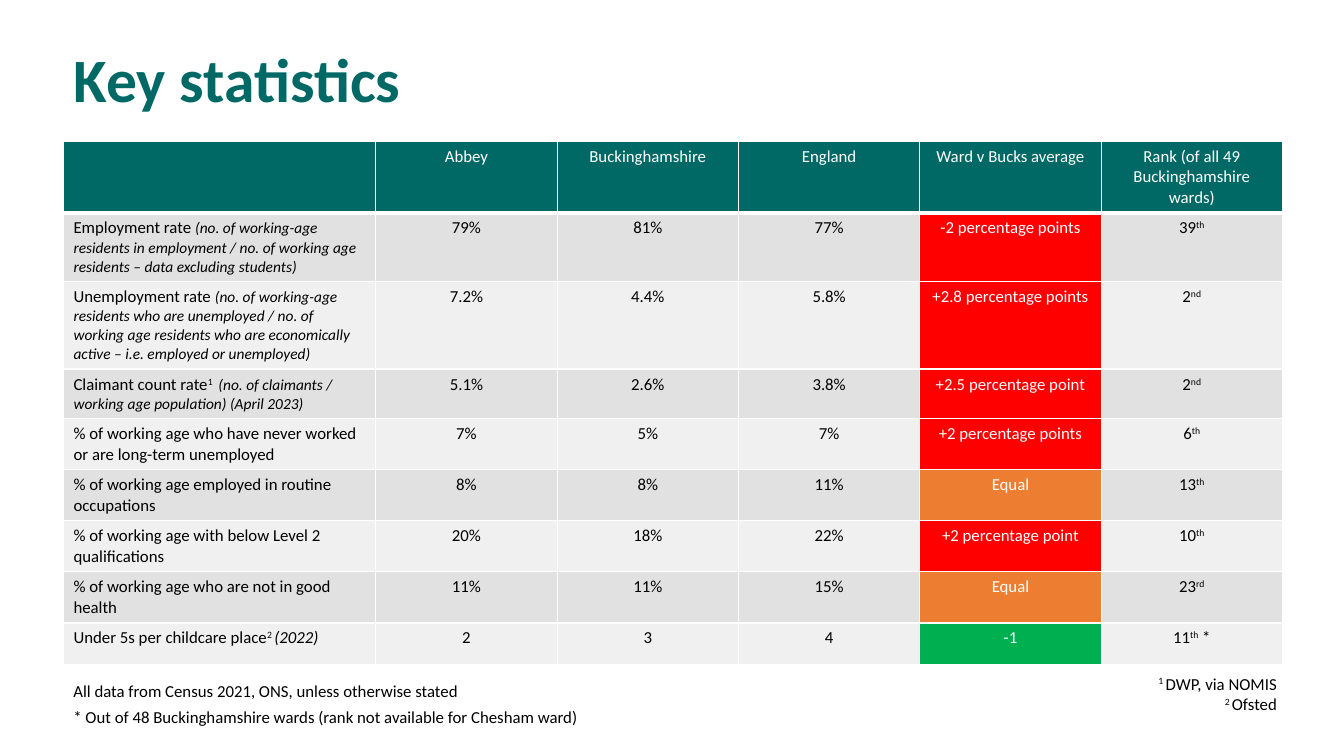
from lxml.etree import SubElement
from pptx import Presentation
from pptx.dml.color import RGBColor
from pptx.enum.text import MSO_ANCHOR, PP_ALIGN
from pptx.oxml.ns import qn
from pptx.util import Cm, Pt

COLORS = {
    "teal": "006965", "white": "FFFFFF", "black": "000000",
    "dark band": "E1E1E1", "light band": "F0F0F0",
    "worse": "FF0000", "equal": "ED7D31", "better": "00B050",
}
TITLE = "Key statistics"
HEADINGS = ["", "Abbey", "Buckinghamshire", "England", "Ward v Bucks average",
            "Rank (of all 49 Buckinghamshire wards)"]
STATISTICS = [
    ([("Employment rate ", ""),
      ("(no. of working-age residents in employment / no. of working age residents – data excluding students)", "note")],
     "79%", "81%", "77%", "-2 percentage points", "worse", [("39", ""), ("th", "super")]),
    ([("Unemployment rate ", ""),
      ("(no. of working-age residents who are unemployed / no. of working age residents "
       "who are economically active – i.e. employed or unemployed)", "note")],
     "7.2%", "4.4%", "5.8%", "+2.8 percentage points", "worse", [("2", ""), ("nd", "super")]),
    ([("Claimant count rate", ""), ("1 ", "super"),
      (" (no. of claimants / working age population) (April 2023)", "note")],
     "5.1%", "2.6%", "3.8%", "+2.5 percentage point", "worse", [("2", ""), ("nd", "super")]),
    ("% of working age who have never worked or are long-term unemployed",
     "7%", "5%", "7%", "+2 percentage points", "worse", [("6", ""), ("th", "super")]),
    ("% of working age employed in routine occupations",
     "8%", "8%", "11%", "Equal", "equal", [("13", ""), ("th", "super")]),
    ("% of working age with below Level 2 qualifications",
     "20%", "18%", "22%", "+2 percentage point", "worse", [("10", ""), ("th", "super")]),
    ("% of working age who are not in good health",
     "11%", "11%", "15%", "Equal", "equal", [("23", ""), ("rd", "super")]),
    ([("Under 5s per childcare place", ""), ("2 ", "super"), ("(2022)", "italic")],
     "2", "3", "4", "-1", "better", [("11", ""), ("th", "super"), (" *", "")]),
]
FOOTNOTES = [
    (1.6, 17.02, 18.31, 0.76, PP_ALIGN.LEFT,
     ["All data from Census 2021, ONS, unless otherwise stated"]),
    (19.91, 16.84, 12.52, 1.27, PP_ALIGN.RIGHT,
     [[("1 ", "super"), ("DWP, via NOMIS", "")], [("2 ", "super"), ("Ofsted", "")]]),
    (1.6, 17.68, 18.31, 0.76, PP_ALIGN.LEFT,
     ["* Out of 48 Buckinghamshire wards (rank not available for Chesham ward)"]),
]
LEFT, TABLE_TOP, ROW_HEIGHT = 1.6, 3.56, 1.04
COLUMN_WIDTHS = [7.87] + [4.57] * 5


def write(paragraph, content, size=12, color="black", bold=False, align=PP_ALIGN.LEFT):
    paragraph.alignment = align
    for text, style in [(content, "")] if isinstance(content, str) else content:
        run = paragraph.add_run()
        run.text = text
        font = run.font
        font.name = "Calibri"
        font.size = Pt(11 if style == "note" else size)
        font.bold = bold
        font.italic = style in ("note", "italic")
        font.color.rgb = RGBColor.from_string(COLORS[color])
        if style == "super":
            font._element.set("baseline", "30000")


def fill_cell(cell, content, fill, bottom=1, **text_format):
    properties = cell._tc.get_or_add_tcPr()
    for side, width in (("L", 1), ("R", 1), ("T", 1), ("B", bottom)):
        border = SubElement(properties, qn(f"a:ln{side}"), w=str(Pt(width)))
        SubElement(SubElement(border, qn("a:solidFill")), qn("a:srgbClr"), val=COLORS["white"])
    cell.fill.solid()
    cell.fill.fore_color.rgb = RGBColor.from_string(COLORS[fill])
    if content:
        write(cell.text_frame.paragraphs[0], content, **text_format)


def add_statistics(slide):
    table = slide.shapes.add_table(
        len(STATISTICS) + 1, len(HEADINGS), Cm(LEFT), Cm(TABLE_TOP),
        Cm(sum(COLUMN_WIDTHS)), Cm(ROW_HEIGHT * (len(STATISTICS) + 1))).table
    for column, width in zip(table.columns, COLUMN_WIDTHS):
        column.width = Cm(width)
    for row in table.rows:
        row.height = Cm(ROW_HEIGHT)
    for column, heading in enumerate(HEADINGS):
        fill_cell(table.cell(0, column), heading, "teal", bottom=3,
                  color="white", align=PP_ALIGN.CENTER)
    for row, (label, ward, county, country, gap, verdict, rank) in enumerate(STATISTICS, 1):
        band = "dark band" if row % 2 else "light band"
        fill_cell(table.cell(row, 0), label, band)
        for column, value in enumerate((ward, county, country, gap, rank), 1):
            is_gap = column == 4
            fill_cell(table.cell(row, column), value, verdict if is_gap else band,
                      color="white" if is_gap else "black", align=PP_ALIGN.CENTER)


def main():
    deck = Presentation()
    deck.slide_width, deck.slide_height = Cm(33.87), Cm(19.05)
    slide = deck.slides.add_slide(deck.slide_layouts[5])
    title = slide.shapes.title
    title.left, title.top, title.width, title.height = Cm(LEFT), Cm(0.91), Cm(29.21), Cm(2.36)
    title.text_frame.vertical_anchor = MSO_ANCHOR.MIDDLE
    heading = title.text_frame.paragraphs[0]
    heading.line_spacing = 0.9
    write(heading, TITLE, size=44, color="teal", bold=True)
    add_statistics(slide)
    for left, top, width, height, align, lines in FOOTNOTES:
        frame = slide.shapes.add_textbox(Cm(left), Cm(top), Cm(width), Cm(height)).text_frame
        frame.word_wrap = True
        for index, line in enumerate(lines):
            paragraph = frame.add_paragraph() if index else frame.paragraphs[0]
            write(paragraph, line, align=align)
    deck.save("out.pptx")


if __name__ == "__main__":
    main()
